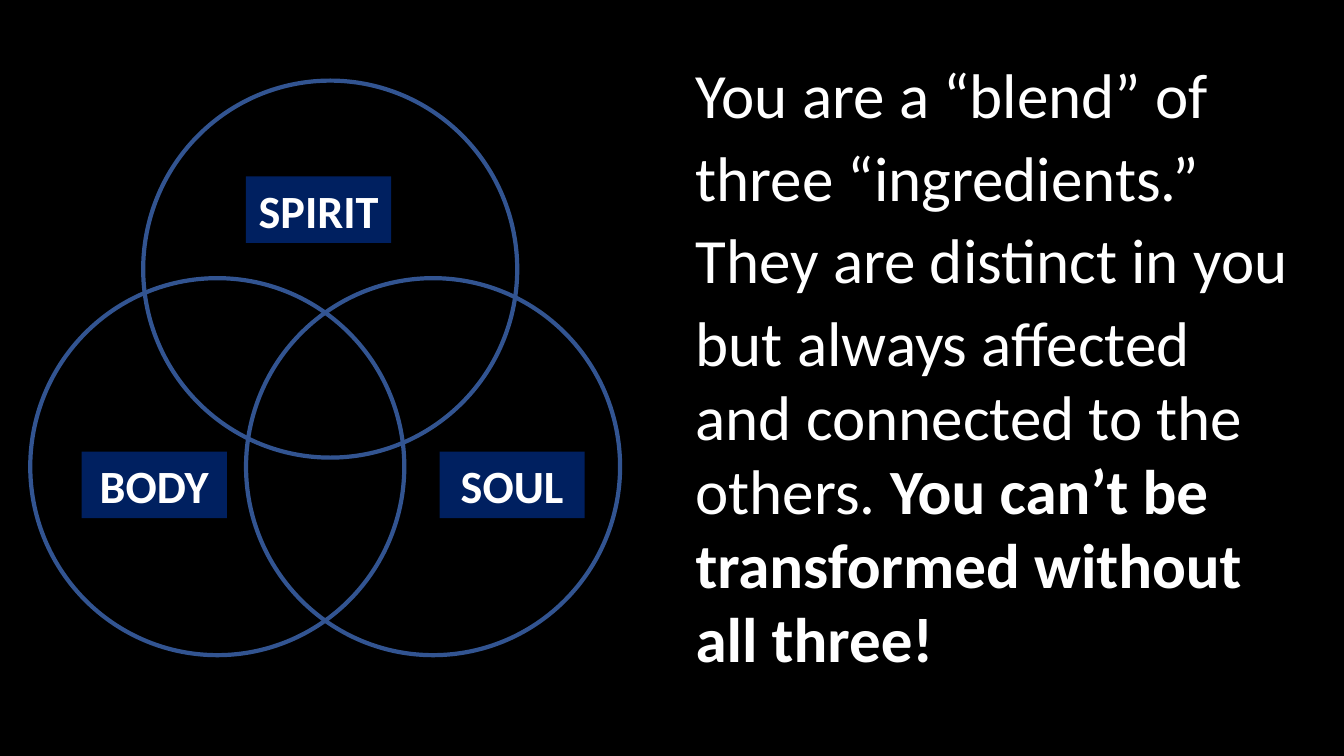
from dataclasses import dataclass

from pptx import Presentation
from pptx.dml.color import RGBColor
from pptx.enum.shapes import MSO_AUTO_SHAPE_TYPE as Preset
from pptx.enum.text import MSO_AUTO_SIZE as AutoSize, PP_ALIGN as Align
from pptx.util import Pt

PX = 9144  # EMU per px, 100 px to the inch


@dataclass(frozen=True)
class Theme:
    font: str = "Calibri"
    background: RGBColor = RGBColor(0, 0, 0)
    text: RGBColor = RGBColor(255, 255, 255)
    ring: RGBColor = RGBColor(0x32, 0x54, 0x91)
    label: RGBColor = RGBColor(0x00, 0x20, 0x60)
    message_size: int = 45
    label_size: int = 33
    ring_width: int = 3


THEME = Theme()

MESSAGE = [
    [("You are a “blend” of", False)],
    [("three “ingredients.”", False)],
    [("They are distinct in you", False)],
    [("but always affected and connected to the others. ", False),
     ("You can’t be transformed without all three!", True)],
]

RING_SIZE = (371, 374)
LABEL_SIZE = (144, 66)
# name, ring offset, label offset, both from the diagram's corner
INGREDIENTS = [
    ("BODY", (0, 196), (51, 368)),
    ("SOUL", (214, 196), (406, 368)),
    ("SPIRIT", (112, 0), (214, 95)),
]


def px(*lengths):
    return [length * PX for length in lengths]


def format_run(run, size, bold):
    run.font.name = THEME.font
    run.font.size = Pt(size)
    run.font.bold = bold
    run.font.color.rgb = THEME.text


def add_message(slide, left, top, width, height):
    box = slide.shapes.add_textbox(*px(left, top, width, height))
    frame = box.text_frame
    frame.word_wrap = True
    frame.auto_size = AutoSize.SHAPE_TO_FIT_TEXT
    for index, parts in enumerate(MESSAGE):
        paragraph = frame.add_paragraph() if index else frame.paragraphs[0]
        paragraph.space_after = Pt(6)
        paragraph.line_spacing = 0.98
        for words, bold in parts:
            run = paragraph.add_run()
            run.text = words
            format_run(run, THEME.message_size, bold)


def add_ring(group, left, top):
    ring = group.shapes.add_shape(Preset.OVAL, *px(left, top, *RING_SIZE))
    ring.shadow.inherit = False
    ring.fill.background()
    ring.line.color.rgb = THEME.ring
    ring.line.width = Pt(THEME.ring_width)


def add_label(group, name, left, top):
    label = group.shapes.add_shape(Preset.RECTANGLE, *px(left, top, *LABEL_SIZE))
    label.shadow.inherit = False
    label.fill.solid()
    label.fill.fore_color.rgb = THEME.label
    label.line.fill.background()
    frame = label.text_frame
    frame.word_wrap = True
    frame.auto_size = AutoSize.SHAPE_TO_FIT_TEXT
    frame.text = name
    paragraph = frame.paragraphs[0]
    paragraph.alignment = Align.CENTER
    format_run(paragraph.runs[0], THEME.label_size, True)


def add_venn_diagram(slide, left, top):
    group = slide.shapes.add_group_shape()
    for _, (x, y), _ in INGREDIENTS:
        add_ring(group, left + x, top + y)
    for name, _, (x, y) in INGREDIENTS:
        add_label(group, name, left + x, top + y)


def main():
    presentation = Presentation()
    presentation.slide_width, presentation.slide_height = px(1333, 750)
    slide = presentation.slides.add_slide(presentation.slide_layouts[6])
    slide.background.fill.solid()
    slide.background.fill.fore_color.rgb = THEME.background
    add_message(slide, left=680, top=54, width=608, height=641)
    add_venn_diagram(slide, left=30, top=80)
    presentation.save("out.pptx")


if __name__ == "__main__":
    main()
